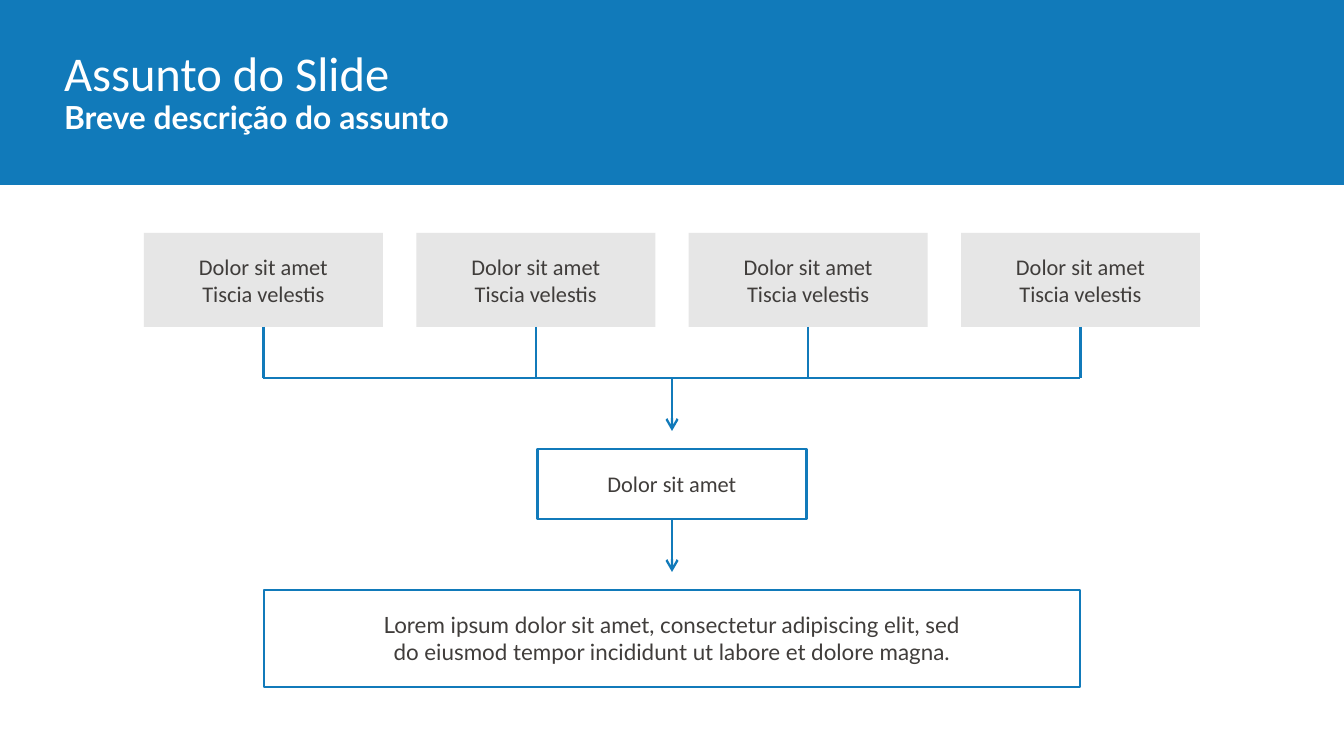
from copy import deepcopy
from dataclasses import dataclass

from lxml.etree import SubElement
from pptx import Presentation
from pptx.dml.color import RGBColor
from pptx.enum.shapes import MSO_CONNECTOR as Connector, MSO_SHAPE as Shape
from pptx.enum.text import MSO_ANCHOR as Anchor, MSO_AUTO_SIZE as AutoSize, PP_ALIGN as Align
from pptx.oxml.ns import qn
from pptx.util import Pt

TITLE = "Assunto do Slide"
SUBTITLE = "Breve descrição do assunto"
SOURCES = ["Dolor sit amet\nTiscia velestis"] * 4
MIDDLE = "Dolor sit amet"
RESULT = (
    "Lorem ipsum dolor sit amet, consectetur adipiscing elit, sed\n"
    "do eiusmod tempor incididunt ut labore et dolore magna."
)


@dataclass(frozen=True)
class Theme:
    blue: RGBColor = RGBColor.from_string("117ABA")
    grey: RGBColor = RGBColor.from_string("E6E6E6")
    ink: RGBColor = RGBColor.from_string("403D3B")
    white: RGBColor = RGBColor.from_string("FFFFFF")
    main_font: str = "Calibri"
    second_font: str = "Lato"
    title_size: int = 26
    subtitle_size: int = 17
    body_size: int = 12
    line_width: float = 1.25


THEME = Theme()
PX = 914400 / 134.4
WIDTH, HEIGHT = 1344, 756
CENTER = WIDTH / 2
MARGIN = 144
SOURCE_TOP, SOURCE_WIDTH, SOURCE_HEIGHT = 233, 239, 94
BUS_Y = 378
ARROW_LENGTH = 53
MIDDLE_TOP, MIDDLE_WIDTH, MIDDLE_HEIGHT = 449, 269, 70
RESULT_TOP, RESULT_WIDTH, RESULT_HEIGHT = 590, 816, 97


def emu(*lengths):
    return [round(length * PX) for length in lengths]


def write(shape, text, size, color, font, bold=False, align=Align.LEFT,
          anchor=Anchor.TOP, inset=0):
    frame = shape.text_frame
    frame.word_wrap = True
    frame.auto_size = AutoSize.NONE
    frame.vertical_anchor = anchor
    frame.margin_left = frame.margin_right = emu(inset)[0]
    frame.margin_top = frame.margin_bottom = 0
    para = frame.paragraphs[0]
    para.text = text
    para.alignment = align
    for span in para.runs:
        span.font.size = Pt(size)
        span.font.name = font
        span.font.bold = bold
        span.font.color.rgb = color
    for line_break in para._p.findall(qn("a:br")):
        line_break.append(deepcopy(para.runs[0]._r.rPr))


def add_rect(page, left, top, width, height, fill=None):
    box = page.shapes.add_shape(Shape.RECTANGLE, *emu(left, top, width, height))
    box.shadow.inherit = False
    if fill is None:
        box.fill.background()
        box.line.color.rgb = THEME.blue
        box.line.width = Pt(THEME.line_width)
    else:
        box.fill.solid()
        box.fill.fore_color.rgb = fill
        box.line.fill.background()
    return box


def add_box(page, text, left, top, width, height, fill=None, font=THEME.main_font):
    box = add_rect(page, left, top, width, height, fill)
    write(box, text, THEME.body_size, THEME.ink, font,
          align=Align.CENTER, anchor=Anchor.MIDDLE, inset=13)
    return box


def add_line(page, start, end, source=None, arrow=False):
    line = page.shapes.add_connector(Connector.STRAIGHT, *emu(*start, *end))
    if source is not None:
        line.begin_connect(source, 2)
    line.line.color.rgb = THEME.blue
    line.line.width = Pt(THEME.line_width)
    if arrow:
        SubElement(line.line._get_or_add_ln(), qn("a:tailEnd"), type="arrow")
    SubElement(line._element.spPr, qn("a:effectLst"))


def add_header(page):
    add_rect(page, 0, 0, WIDTH, 185, THEME.blue)
    title = page.shapes.title
    page.shapes._spTree.append(title._element)
    title.left, title.top, title.width, title.height = emu(64, 43, 450, 56)
    write(title, TITLE, THEME.title_size, THEME.white, THEME.main_font)
    subtitle = page.shapes.add_textbox(*emu(64, 98, 504, 62))
    write(subtitle, SUBTITLE, THEME.subtitle_size, THEME.white, THEME.second_font, bold=True)


def add_flow(page):
    step = (WIDTH - 2 * MARGIN - SOURCE_WIDTH) / (len(SOURCES) - 1)
    centers = [MARGIN + SOURCE_WIDTH / 2 + step * i for i in range(len(SOURCES))]
    for text, x in zip(SOURCES, centers):
        box = add_box(page, text, x - SOURCE_WIDTH / 2, SOURCE_TOP,
                      SOURCE_WIDTH, SOURCE_HEIGHT, THEME.grey)
        add_line(page, (x, SOURCE_TOP + SOURCE_HEIGHT), (x, BUS_Y), box)
    add_line(page, (centers[0], BUS_Y), (centers[-1], BUS_Y))
    add_line(page, (CENTER, BUS_Y), (CENTER, BUS_Y + ARROW_LENGTH), arrow=True)

    middle = add_box(page, MIDDLE, CENTER - MIDDLE_WIDTH / 2, MIDDLE_TOP,
                     MIDDLE_WIDTH, MIDDLE_HEIGHT)
    bottom = MIDDLE_TOP + MIDDLE_HEIGHT
    add_line(page, (CENTER, bottom), (CENTER, bottom + ARROW_LENGTH), middle, arrow=True)
    add_box(page, RESULT, CENTER - RESULT_WIDTH / 2, RESULT_TOP,
            RESULT_WIDTH, RESULT_HEIGHT, font=THEME.second_font)


def main():
    deck = Presentation()
    deck.slide_width, deck.slide_height = emu(WIDTH, HEIGHT)
    page = deck.slides.add_slide(deck.slide_layouts[5])
    add_header(page)
    add_flow(page)
    deck.save("out.pptx")


if __name__ == "__main__":
    main()
